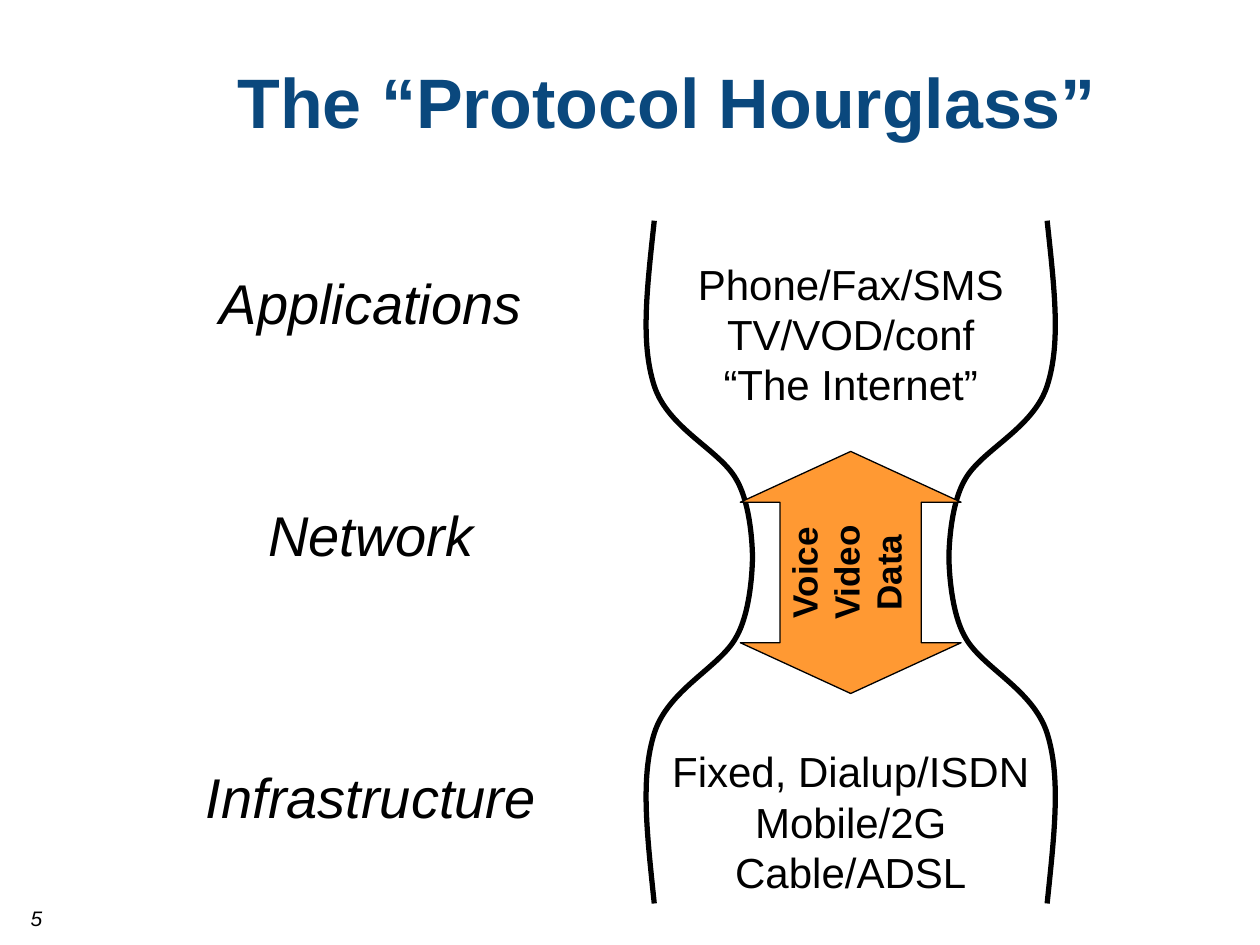
from lxml.etree import SubElement
from pptx import Presentation
from pptx.dml.color import RGBColor
from pptx.enum.shapes import MSO_SHAPE as Shape
from pptx.enum.text import MSO_ANCHOR as Anchor, PP_ALIGN as Align
from pptx.oxml.ns import qn
from pptx.util import Cm, Pt

COLORS = {"title": "0A487D", "ink": "000000", "arrow": "FF9933"}
FONT = "Arial"

# Content: lines of text with the top of each box, in cm
TITLE = "The “Protocol Hourglass”"
PAGE_NUMBER = "5"
LAYERS = [("Applications", 5.28), ("Network", 9.96), ("Infrastructure", 15.24)]
EXAMPLES = [
    (["Phone/Fax/SMS", "TV/VOD/conf", "“The Internet”"], 5.08),
    (["Fixed, Dialup/ISDN", "Mobile/2G", "Cable/ADSL"], 14.91),
]
SERVICES = ["Voice", "Video", "Data"]

# Hourglass: Bezier points of one quarter, as distances from the waist centre
AXIS, WAIST = 17.15, 11.23
QUARTER = [(3.96, 6.78), (4.11, 5.38), (4.24, 4.32), (3.96, 3.45), (3.68, 2.59),
           (2.64, 2.16), (2.31, 1.57), (1.98, 1.02), (1.98, 0), (1.98, 0)]
UPPER, LOWER = -1, 1.03
LABEL_CENTER, LABEL_WIDTH, LABEL_HEIGHT = 7.48, 7.5, 1.63
EXAMPLE_WIDTH, EXAMPLE_HEIGHT = 7.77, 3.33
ARROW_LENGTH, ARROW_BREADTH, ARROW_MIDDLE = 4.88, 4.45, 11.54


def color(name):
    return RGBColor.from_string(COLORS[name])


def write(shape, lines, size, ink="ink", bold=False, italic=False, anchor=Anchor.TOP):
    frame = shape.text_frame
    frame.text = "\n".join(lines)
    frame.vertical_anchor = anchor
    frame.word_wrap = True
    for para in frame.paragraphs:
        para.alignment = Align.CENTER
        font = para.font
        font.name, font.size = FONT, Pt(size)
        font.bold, font.italic = bold, italic
        font.color.rgb = color(ink)


def add_text(page, left, top, width, height, lines, size, **style):
    box = page.shapes.add_textbox(Cm(left), Cm(top), Cm(width), Cm(height))
    write(box, lines, size, **style)


def add_curve(page, points):
    """Draw an outline through the points, then turn each three into a Bezier."""
    first, *rest = [(Cm(x), Cm(y)) for x, y in points]
    builder = page.shapes.build_freeform(*first)
    builder.add_line_segments(rest, close=False)
    curve = builder.convert_to_shape()
    segments = list(curve.element.iter(qn("a:lnTo")))
    for start in range(0, len(segments), 3):
        bezier = SubElement(segments[start].getparent(), qn("a:cubicBezTo"))
        for segment in segments[start:start + 3]:
            bezier.append(segment[0])
            segment.getparent().remove(segment)
    curve.shadow.inherit = False
    curve.fill.background()
    curve.line.color.rgb = color("ink")
    curve.line.width = Pt(3)


def main():
    deck = Presentation()
    deck.slide_width, deck.slide_height = Cm(25.4), Cm(19.05)
    page = deck.slides.add_slide(deck.slide_layouts[6])

    # Title and page number
    add_text(page, 2.11, 0.43, 22.66, 3.18, [TITLE], 40,
             ink="title", bold=True, anchor=Anchor.MIDDLE)
    add_text(page, 0, 17.98, 1.47, 1.07, [PAGE_NUMBER], 12,
             italic=True, anchor=Anchor.MIDDLE)

    # Hourglass outline, mirrored from one quarter
    for side in (-1, 1):
        for half in (UPPER, LOWER):
            add_curve(page, [(AXIS + side * x, WAIST + half * y) for x, y in QUARTER])

    # Layer names and examples
    for name, top in LAYERS:
        add_text(page, LABEL_CENTER - LABEL_WIDTH / 2, top, LABEL_WIDTH, LABEL_HEIGHT,
                 [name], 32, italic=True)
    for lines, top in EXAMPLES:
        add_text(page, AXIS - EXAMPLE_WIDTH / 2, top, EXAMPLE_WIDTH, EXAMPLE_HEIGHT,
                 lines, 24)

    # Upright double arrow with its text running upwards
    arrow = page.shapes.add_shape(
        Shape.LEFT_RIGHT_ARROW,
        Cm(AXIS - ARROW_LENGTH / 2), Cm(ARROW_MIDDLE - ARROW_BREADTH / 2),
        Cm(ARROW_LENGTH), Cm(ARROW_BREADTH))
    arrow.rotation = 270
    arrow.adjustments[0], arrow.adjustments[1] = 0.64, 0.23
    arrow.shadow.inherit = False
    arrow.fill.solid()
    arrow.fill.fore_color.rgb = color("arrow")
    arrow.line.color.rgb = color("ink")
    arrow.line.width = Pt(0.75)
    write(arrow, SERVICES, 20, bold=True)
    frame = arrow.text_frame
    frame.margin_left = frame.margin_right = frame.margin_bottom = 0
    frame.margin_top = Cm(0.05)

    deck.save("out.pptx")


if __name__ == "__main__":
    main()
